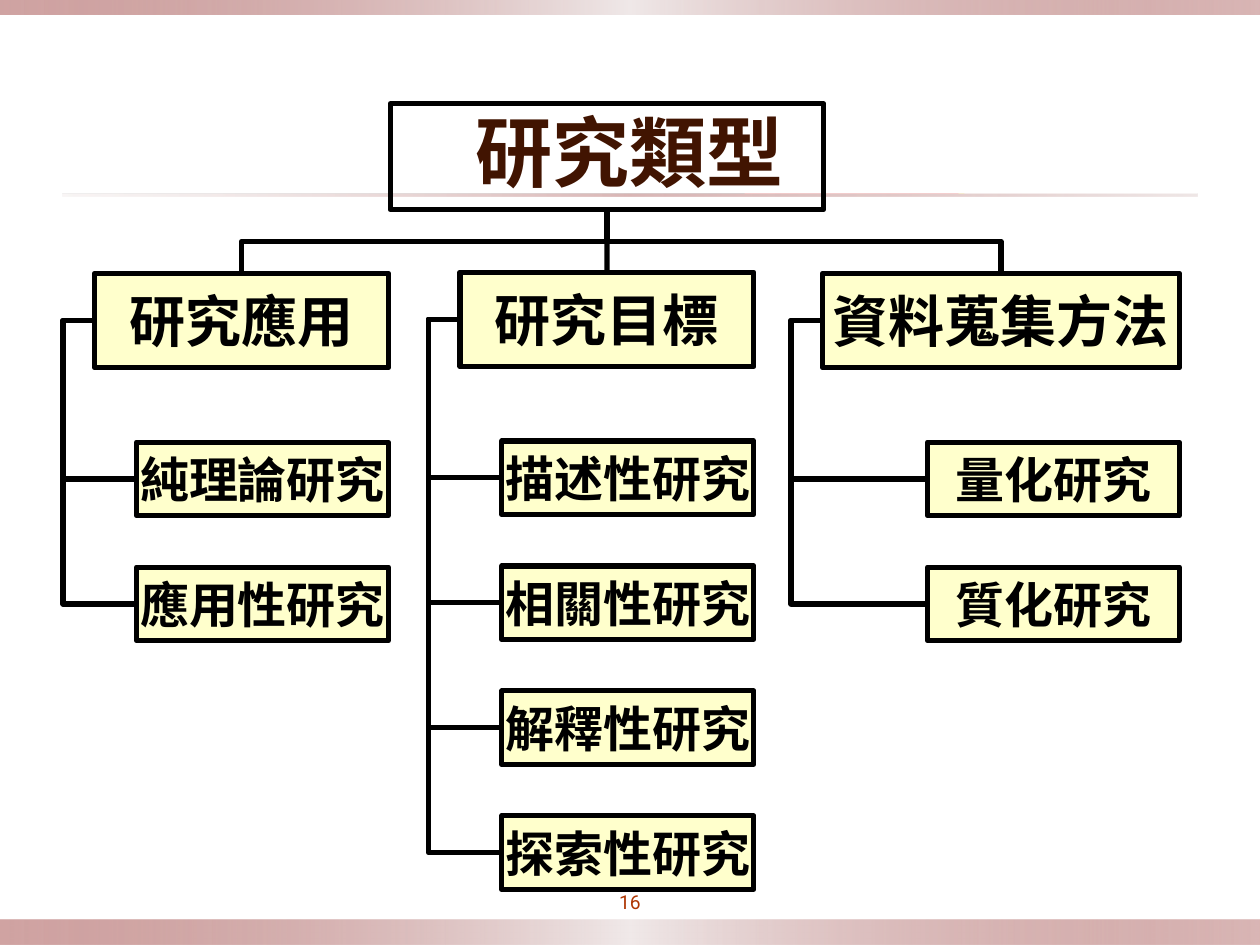
from lxml.etree import SubElement
from pptx import Presentation
from pptx.dml.color import RGBColor
from pptx.enum.shapes import MSO_CONNECTOR as CONN, MSO_SHAPE as SHAPE
from pptx.enum.text import MSO_ANCHOR as ANCHOR, PP_ALIGN as ALIGN
from pptx.oxml.ns import qn
from pptx.util import Pt

BLACK = RGBColor(0x00, 0x00, 0x00)
CREAM = RGBColor(0xFF, 0xFF, 0xCC)
BROWN = RGBColor(0x41, 0x14, 0x01)
RUST = RGBColor(0xAE, 0x36, 0x03)
ROSE = RGBColor(0xA2, 0x4A, 0x48)
PALE = RGBColor(0xF0, 0xE9, 0xE9)
BLUSH = RGBColor(0xE0, 0xD0, 0xCF)

BAND = [(0, ROSE, 50), (50, PALE, 100), (100, ROSE, 40)]
RULE = [(0, BLUSH, 20), (50, ROSE, 40), (100, BLUSH, 50)]
HEAD = {"name": "Arial", "size": Pt(32), "bold": True}
ITEM = {**HEAD, "size": Pt(28)}
TITLE = {**HEAD, "size": Pt(44)}
NUMBER = {"name": "Roboto", "size": Pt(11)}

LINE_W = 3
HEAD_H = 54
ITEM_W, ITEM_H = 144, 42
ITEM_DROP, ITEM_STEP = 96.5, 71.4
TRUNK_GAP = 18

# left, top, width of the heading; heading; items
BRANCHES = [
    (54, 156.2, 168, "研究應用", ["純理論研究", "應用性研究"]),
    (262.8, 155.5, 168, "研究目標",
     ["描述性研究", "相關性研究", "解釋性研究", "探索性研究"]),
    (470, 156.2, 204, "資料蒐集方法", ["量化研究", "質化研究"]),
]


def write(sp, text, font, color):
    tf = sp.text_frame
    tf.vertical_anchor = ANCHOR.MIDDLE
    p = tf.paragraphs[0]
    p.alignment = ALIGN.CENTER
    r = p.add_run()
    r.text = text
    for key, value in font.items():
        setattr(r.font, key, value)
    r.font.color.rgb = color


def add_label(s, box, text, font, color, inset):
    sp = s.shapes.add_textbox(*map(Pt, box))
    tf = sp.text_frame
    tf.word_wrap = True
    for side in ("left", "top", "right", "bottom"):
        setattr(tf, f"margin_{side}", Pt(inset))
    write(sp, text, font, color)


def add_rect(s, box):
    sp = s.shapes.add_shape(SHAPE.RECTANGLE, *map(Pt, box))
    sp.shadow.inherit = False
    return sp


def add_strip(s, box, stops):
    """Borderless strip with a left-to-right gradient of (percent, colour, opacity)."""
    sp = add_rect(s, box)
    sp.line.fill.background()
    sp.fill.gradient()
    sp.fill.gradient_angle = 0
    gs_list = sp._element.spPr.find(qn("a:gradFill")).find(qn("a:gsLst"))
    for old in list(gs_list):
        gs_list.remove(old)
    for pos, color, opacity in stops:
        gs = SubElement(gs_list, qn("a:gs"), pos=str(pos * 1000))
        clr = SubElement(gs, qn("a:srgbClr"), val=str(color))
        SubElement(clr, qn("a:alpha"), val=str(opacity * 1000))


def add_box(s, box, text=None, font=None):
    """Black-bordered box, cream when it holds text and clear when it does not."""
    sp = add_rect(s, box)
    sp.line.color.rgb = BLACK
    sp.line.width = Pt(LINE_W)
    if text:
        sp.fill.solid()
        sp.fill.fore_color.rgb = CREAM
        sp.text_frame.word_wrap = False
        write(sp, text, font, BLACK)
    else:
        sp.fill.background()
    return sp


def join(s, kind, start, start_side, end, end_side):
    c = s.shapes.add_connector(kind, 0, 0, 0, 0)
    c.begin_connect(start, start_side)
    c.end_connect(end, end_side)
    c.line.color.rgb = BLACK
    c.line.width = Pt(LINE_W)
    SubElement(c._element.spPr, qn("a:effectLst"))
    return c


def join_item(s, head, item):
    """Bracket from the heading's left side to the item's left side."""
    c = join(s, CONN.ELBOW, head, 1, item, 1)
    bend = round(-100000 * Pt(TRUNK_GAP) / (item.left - head.left))
    guides = c._element.spPr.find(qn("a:prstGeom")).get_or_add_avLst()
    SubElement(guides, qn("a:gd"), name="adj1", fmla=f"val {bend}")


def join_head(s, root, head):
    """Link from the root's bottom to the heading's top, bent halfway down."""
    x1, x2 = (sp.left + sp.width // 2 for sp in (root, head))
    if abs(x1 - x2) < Pt(2):
        join(s, CONN.STRAIGHT, root, 2, head, 0)
        return
    c = join(s, CONN.ELBOW, root, 2, head, 0)
    y1, y2 = root.top + root.height, head.top
    drop, reach = y2 - y1, abs(x2 - x1)
    c.left, c.top = (x1 + x2 - drop) // 2, (y1 + y2 - reach) // 2
    c.width, c.height = drop, reach
    xfrm = c._element.spPr.find(qn("a:xfrm"))
    for flip in ("flipH", "flipV"):
        xfrm.attrib.pop(flip, None)
    if x2 < x1:
        xfrm.set("rot", "5400000")
    else:
        xfrm.set("rot", "16200000")
        xfrm.set("flipH", "1")


def add_branch(s, left, top, width, heading, names):
    head = add_box(s, (left, top, width, HEAD_H), heading, HEAD)
    item_left = left + width - ITEM_W
    for i, name in enumerate(names):
        item_top = top + ITEM_DROP + i * ITEM_STEP
        item = add_box(s, (item_left, item_top, ITEM_W, ITEM_H), name, ITEM)
        join_item(s, head, item)
    return head


def add_backdrop(s, width, height):
    add_strip(s, (0, height - 14.4, width, 14.4), BAND)
    add_strip(s, (0, 0, width, 8.6), BAND)
    add_strip(s, (36, 110.9, width - 72, 1.4), RULE)
    add_label(s, (324, 504, 72, 22.3), "16", NUMBER, RUST, 3.6)


def add_tree(s):
    add_label(s, (54, 41, 612, 90), "研究類型", TITLE, BROWN, 3.6)
    heads = [add_branch(s, *branch) for branch in BRANCHES]
    root = add_box(s, (223, 59.3, 247.7, 60.5))
    for head in heads:
        join_head(s, root, head)


def main():
    prs = Presentation()
    prs.slide_width, prs.slide_height = Pt(720), Pt(540)
    s = prs.slides.add_slide(prs.slide_layouts[6])
    add_backdrop(s, 720, 540)
    add_tree(s)
    prs.save("out.pptx")


if __name__ == "__main__":
    main()
